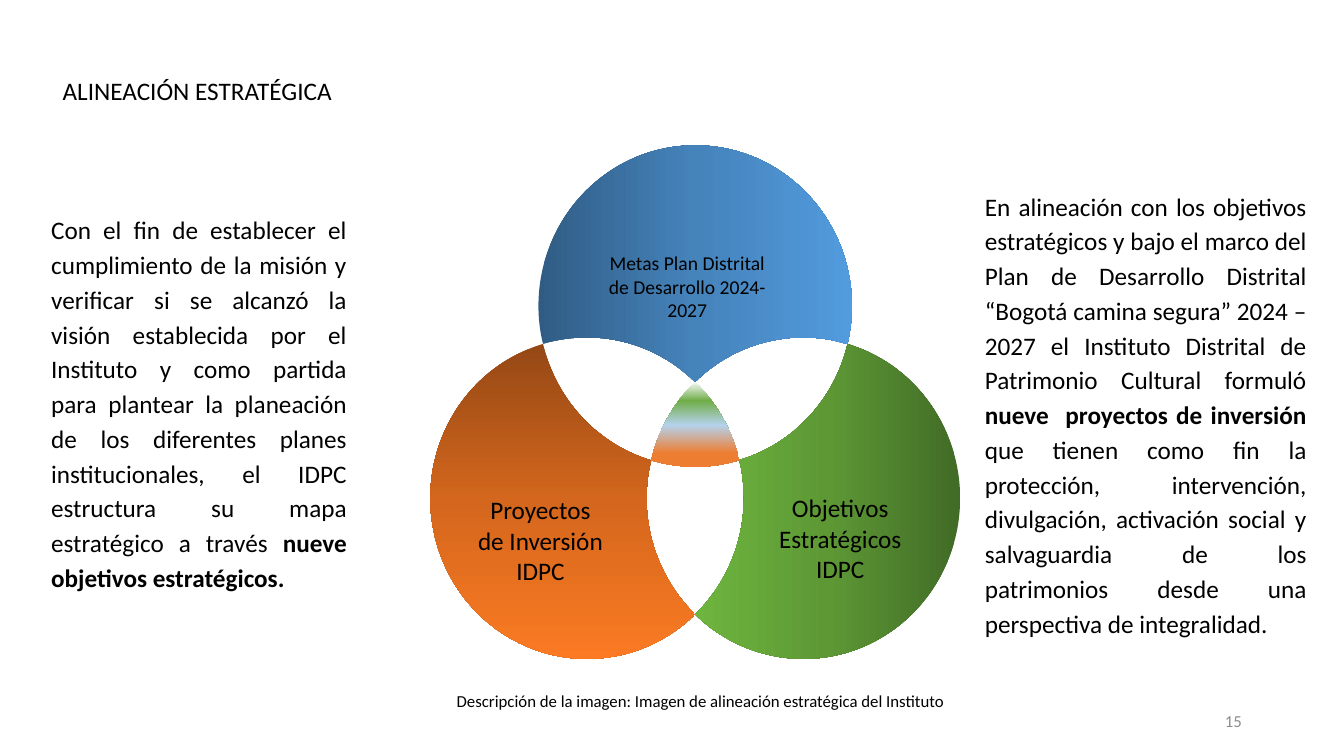
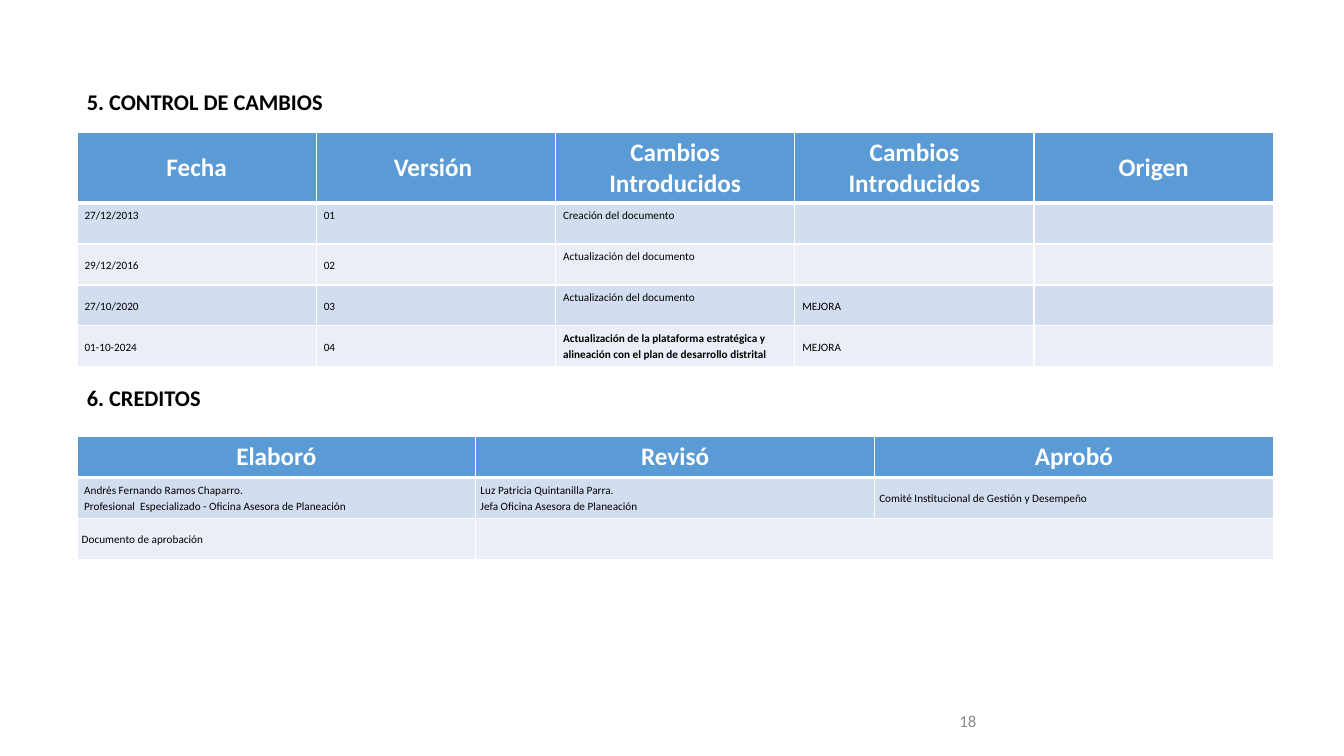
from math import cos, radians, sin, sqrt, tan

from lxml.etree import SubElement
from pptx import Presentation
from pptx.dml.color import RGBColor
from pptx.enum.text import MSO_ANCHOR as Anchor, PP_ALIGN as Align
from pptx.oxml.ns import qn
from pptx.util import Cm, Pt

BLACK = RGBColor(0x00, 0x00, 0x00)
WHITE = RGBColor(0xFF, 0xFF, 0xFF)
GRAY = RGBColor(0x8C, 0x8C, 0x8C)
HEADER_BLUE = RGBColor(0x5B, 0x9B, 0xD5)
BAND_DARK = RGBColor(0xD2, 0xDE, 0xEF)
BAND_LIGHT = RGBColor(0xEA, 0xEF, 0xF7)

BLUE_STOPS = [
    (0, RGBColor(0x30, 0x5C, 0x84)),
    (50, RGBColor(0x45, 0x83, 0xBB)),
    (100, RGBColor(0x52, 0x9B, 0xDE)),
]
GREEN_STOPS = [
    (0, RGBColor(0x41, 0x6B, 0x26)),
    (50, RGBColor(0x5D, 0x98, 0x35)),
    (100, RGBColor(0x6E, 0xB5, 0x3F)),
]
ORANGE_STOPS = [
    (0, RGBColor(0x95, 0x48, 0x15)),
    (50, RGBColor(0xD4, 0x67, 0x1D)),
    (100, RGBColor(0xFB, 0x7A, 0x23)),
]
CORE_STOPS = [
    (0, RGBColor(0xF7, 0xFA, 0xFD)),
    (22, RGBColor(0x70, 0xAD, 0x47)),
    (51, RGBColor(0xB5, 0xD2, 0xEC)),
    (84, RGBColor(0xED, 0x7D, 0x31)),
]

FONT = "Calibri"
TITLE = {"size": Pt(18)}
SECTION = {"size": Pt(16), "bold": True}
BODY = {"size": Pt(18)}
SMALL_LABEL = {"size": Pt(14)}
CAPTION = {"size": Pt(12)}
HEADER_CELL = {"size": Pt(18), "bold": True, "color": WHITE}
BODY_CELL = {"size": Pt(8)}
PAGE_NUMBER = {"size": Pt(12), "color": GRAY}

VENN_X, VENN_Y = 17.52, 10.94
RADIUS_X, RADIUS_Y = 3.95, 4.05
CIRCLE_DISTANCE = 1.38 / sqrt(3)
OUTER_ANGLE, INNER_ANGLE = 103.7, 163.7

TABLE_LEFT, TABLE_WIDTH = 1.94, 30.15
ROW_HEIGHT = 1.03


def format_run(run, style):
    settings = {"name": FONT, "color": BLACK, **style}
    run.font.color.rgb = settings.pop("color")
    for name, value in settings.items():
        setattr(run.font, name, value)


def write(frame, paragraphs, style, align=Align.LEFT, spacing=1.0):
    for index, pieces in enumerate(paragraphs):
        paragraph = frame.add_paragraph() if index else frame.paragraphs[0]
        paragraph.alignment = align
        paragraph.line_spacing = spacing
        for text, bold in pieces:
            run = paragraph.add_run()
            run.text = text
            format_run(run, {**style, "bold": bold or style.get("bold", False)})


def add_text(slide, box, pieces, style, align=Align.LEFT, spacing=1.0,
             wrap=True, anchor=Anchor.TOP):
    shape = slide.shapes.add_textbox(*map(Cm, box))
    frame = shape.text_frame
    frame.word_wrap = wrap
    frame.vertical_anchor = anchor
    if isinstance(pieces, str):
        pieces = [(pieces, False)]
    write(frame, [pieces], style, align, spacing)


def add_page_number(slide, number, align):
    add_text(slide, (23.93, 17.65, 7.62, 1.02), number, PAGE_NUMBER, align,
             anchor=Anchor.MIDDLE)


def circle_point(circle, angle, tangent=0):
    across = CIRCLE_DISTANCE * cos(radians(circle)) + cos(angle) - tangent * sin(angle)
    down = CIRCLE_DISTANCE * sin(radians(circle)) + sin(angle) + tangent * cos(angle)
    return Cm(VENN_X + RADIUS_X * across), Cm(VENN_Y + RADIUS_Y * down)


def arc(circle, start, end):
    start, end = circle + start, circle + end
    quadrants = [angle for angle in range(-720, 721, 90)
                 if min(start, end) < angle < max(start, end)]
    angles = sorted([start, *quadrants, end], reverse=start > end)
    points = []
    for first, last in zip(angles, angles[1:]):
        first, last = radians(first), radians(last)
        handle = 4 / 3 * tan((last - first) / 4)
        points += [circle_point(circle, first, handle),
                   circle_point(circle, last, -handle),
                   circle_point(circle, last)]
    return points


def petal_points(circle):
    return (arc(circle, -OUTER_ANGLE, OUTER_ANGLE)
            + arc(circle + 120, -OUTER_ANGLE, -INNER_ANGLE)
            + arc(circle - 120, INNER_ANGLE, OUTER_ANGLE))


def core_points():
    return [point for circle in (-90, 30, 150)
            for point in arc(circle, INNER_ANGLE, 360 - INNER_ANGLE)]


def turn_lines_into_curves(shape):
    outline = next(shape.element.iter(qn("a:path")))
    lines = outline.findall(qn("a:lnTo"))
    for index in range(0, len(lines), 3):
        curve = SubElement(outline, qn("a:cubicBezTo"))
        for line in lines[index:index + 3]:
            curve.append(line[0])
            outline.remove(line)
    outline.append(outline.find(qn("a:close")))


def add_gradient_shape(slide, points, stops, angle):
    builder = slide.shapes.build_freeform(*points[-1], scale=1.0)
    builder.add_line_segments(points, close=True)
    shape = builder.convert_to_shape()
    turn_lines_into_curves(shape)
    shape.shadow.inherit = False
    shape.line.fill.background()
    shape.fill.gradient()
    shape.fill.gradient_angle = angle
    stop_list = next(shape.element.iter(qn("a:gsLst")))
    stop_list.clear()
    for position, color in stops:
        stop = SubElement(stop_list, qn("a:gs"), pos=str(position * 1000))
        SubElement(stop, qn("a:srgbClr"), val=str(color))


def add_borders(cell, widths):
    properties = cell._tc.get_or_add_tcPr()
    for side, width in widths.items():
        line = SubElement(properties, qn(f"a:ln{side}"), w=str(Pt(width)))
        fill = SubElement(line, qn("a:solidFill"))
        SubElement(fill, qn("a:srgbClr"), val=str(WHITE))


def format_cell(cell, row, margins, anchor):
    add_borders(cell, {"L": 1, "R": 1, "T": 3 if row == 1 else 1,
                       "B": 1 if row else 3})
    cell.fill.solid()
    if row == 0:
        cell.fill.fore_color.rgb = HEADER_BLUE
        cell.vertical_anchor = Anchor.MIDDLE
        return
    cell.fill.fore_color.rgb = BAND_DARK if row % 2 else BAND_LIGHT
    cell.vertical_anchor = anchor
    sides = ("margin_left", "margin_top", "margin_right", "margin_bottom")
    for name, value in zip(sides, margins):
        setattr(cell, name, Cm(value))


def add_table(slide, top, rows, header_height, margins, top_cells=(), bold_cells=()):
    column_count = len(rows[0])
    height = header_height + ROW_HEIGHT * (len(rows) - 1)
    frame = slide.shapes.add_table(len(rows), column_count, Cm(TABLE_LEFT), Cm(top),
                                   Cm(TABLE_WIDTH), Cm(height))
    table = frame.table
    for column in table.columns:
        column.width = Cm(TABLE_WIDTH / column_count)
    for row, texts in enumerate(rows):
        table.rows[row].height = Cm(ROW_HEIGHT if row else header_height)
        for column, text in enumerate(texts):
            cell = table.cell(row, column)
            place = (row, column)
            anchor = Anchor.TOP if place in top_cells else Anchor.MIDDLE
            format_cell(cell, row, margins, anchor)
            if text:
                lines = [[(line, place in bold_cells)] for line in text.split("\n")]
                style, align, spacing = (
                    (BODY_CELL, Align.LEFT, 1.15) if row
                    else (HEADER_CELL, Align.CENTER, 1.0))
                write(cell.text_frame, lines, style, align, spacing)
    return table


def add_alignment_slide(presentation):
    slide = presentation.slides.add_slide(presentation.slide_layouts[6])
    add_text(slide, (1.04, 5.17, 7.95, 9.98), [
        ("Con el fin de establecer el cumplimiento de la misión y verificar si se "
         "alcanzó la visión establecida por el Instituto y como partida para plantear "
         "la planeación de los diferentes planes institucionales, el IDPC estructura "
         "su mapa estratégico a través ", False),
        ("nueve objetivos estratégicos.", True),
    ], BODY, Align.JUSTIFY, 1.15)
    add_text(slide, (24.57, 4.57, 8.61, 11.76), [
        ("En alineación con los objetivos estratégicos y bajo el marco del Plan de "
         "Desarrollo Distrital “Bogotá camina segura” 2024 – 2027 el Instituto "
         "Distrital de Patrimonio Cultural formuló ", False),
        ("nueve  proyectos de inversión ", True),
        ("que tienen como fin la protección, intervención, divulgación, activación "
         "social y salvaguardia de los patrimonios desde una perspectiva de "
         "integralidad.", False),
    ], BODY, Align.JUSTIFY, 1.15)
    add_text(slide, (1.33, 1.78, 7.34, 1.02), "ALINEACIÓN ESTRATÉGICA", TITLE, wrap=False)

    for circle, stops, angle in ((-90, BLUE_STOPS, 0), (150, ORANGE_STOPS, 270),
                                 (30, GREEN_STOPS, 180)):
        add_gradient_shape(slide, petal_points(circle), stops, angle)
    add_gradient_shape(slide, core_points(), CORE_STOPS, 270)

    for box, text, style in (
        ((15.07, 6.2, 4.5, 2.06), "Metas Plan Distrital de Desarrollo 2024-2027", SMALL_LABEL),
        ((11.74, 12.34, 3.76, 2.57), "Proyectos de Inversión IDPC", BODY),
        ((19.13, 12.29, 4.09, 2.57), "Objetivos Estratégicos IDPC", BODY),
    ):
        add_text(slide, box, text, style, Align.CENTER)

    add_page_number(slide, "15", Align.RIGHT)
    add_text(slide, (11.26, 17.27, 12.93, 0.76),
             "Descripción de la imagen: Imagen de alineación estratégica del Instituto",
             CAPTION, wrap=False)


def add_control_slide(presentation):
    slide = presentation.slides.add_slide(presentation.slide_layouts[6])
    add_page_number(slide, "18", Align.LEFT)
    add_text(slide, (1.94, 2.1, 6.55, 0.94), "5. CONTROL DE CAMBIOS", SECTION, wrap=False)
    add_text(slide, (1.94, 9.55, 3.43, 0.94), "6. CREDITOS", SECTION, wrap=False)
    changes = [
        ("Fecha", "Versión ", "Cambios Introducidos", "Cambios Introducidos", "Origen"),
        ("27/12/2013", "01", "Creación del documento", "", ""),
        ("29/12/2016", "02", "Actualización del documento", "", ""),
        ("27/10/2020", "03", "Actualización del documento", "MEJORA", ""),
        ("01-10-2024", "04", "Actualización de la plataforma estratégica y alineación "
         "con el plan de desarrollo distrital", "MEJORA", ""),
    ]
    top_cells = [(1, 0), (1, 1)] + [(row, 2) for row in range(1, len(changes))]
    add_table(slide, 3.34, changes, 1.78, (0.19, 0.1, 0.18, 0.1), top_cells, [(4, 2)])
    credits = [
        ("Elaboró", "Revisó", "Aprobó"),
        ("Andrés Fernando Ramos Chaparro.\n"
         "Profesional  Especializado - Oficina Asesora de Planeación",
         "Luz Patricia Quintanilla Parra.\nJefa Oficina Asesora de Planeación",
         "Comité Institucional de Gestión y Desempeño"),
        ("Documento de aprobación", "", ""),
    ]
    table = add_table(slide, 11, credits, ROW_HEIGHT, (0.12, 0, 0.12, 0))
    table.cell(1, 0).margin_left = Cm(0.18)
    table.cell(2, 1).merge(table.cell(2, 2))


def main():
    presentation = Presentation()
    presentation.slide_width = Cm(33.87)
    presentation.slide_height = Cm(19.05)
    add_alignment_slide(presentation)
    add_control_slide(presentation)
    presentation.save("out.pptx")


if __name__ == "__main__":
    main()
